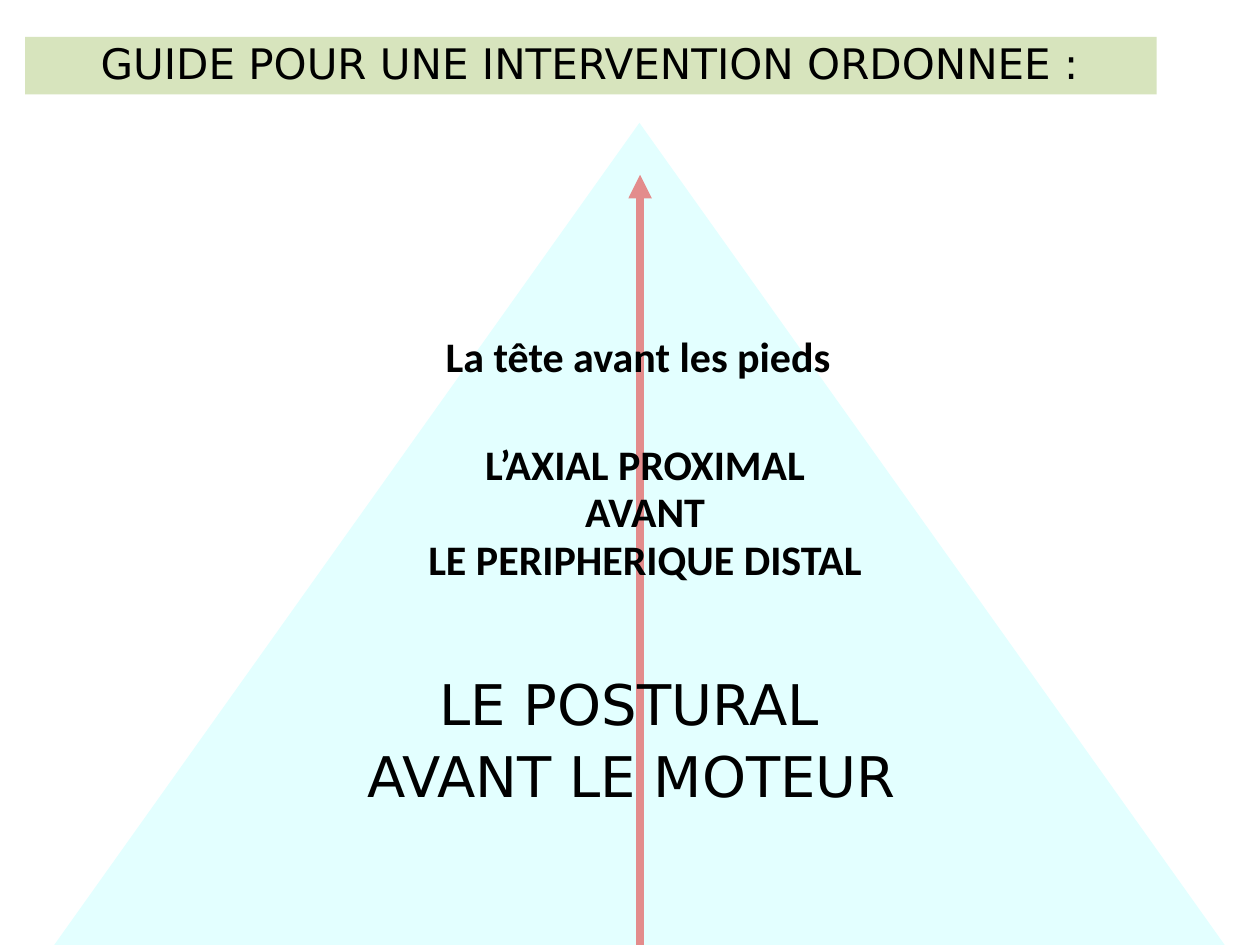
from lxml import etree
from pptx import Presentation
from pptx.dml.color import RGBColor
from pptx.enum.shapes import MSO_CONNECTOR as Connector, MSO_SHAPE as Shape
from pptx.enum.text import MSO_ANCHOR as Anchor, PP_ALIGN as Align
from pptx.oxml.ns import qn
from pptx.util import Inches, Pt

WIDTH, HEIGHT = 10, 7.5
AXIS = 0.508  # share of the slide width where the arrow stands

CALIBRI = {"name": "Calibri", "size": Pt(24), "bold": True}
HEADING = {"name": "DejaVu Sans", "size": Pt(24), "bold": False}
LARGE = HEADING | {"size": Pt(32)}


def color(hex_code):
    return RGBColor.from_string(hex_code)


def box(left, top, width, height):
    """Turn shares of the slide's size into lengths."""
    return (Inches(left * WIDTH), Inches(top * HEIGHT),
            Inches(width * WIDTH), Inches(height * HEIGHT))


def set_format(target, values):
    for name, value in values.items():
        setattr(target, name, value)


def add_filled(slide, kind, area, fill, opacity=None):
    shape = slide.shapes.add_shape(kind, *box(*area))
    shape.shadow.inherit = False
    shape.fill.solid()
    shape.fill.fore_color.rgb = color(fill)
    shape.line.fill.background()
    if opacity is not None:
        fill_color = shape.fill._xPr.find(qn("a:solidFill"))[0]
        etree.SubElement(fill_color, qn("a:alpha"), val=str(opacity * 1000))
    return shape


def add_arrow(slide, x, bottom, top, line_color, width):
    start_x, start_y, end_x, end_y = box(x, bottom, x, top)
    arrow = slide.shapes.add_connector(
        Connector.STRAIGHT, start_x, start_y, end_x, end_y)
    arrow.line.color.rgb = color(line_color)
    arrow.line.width = Pt(width)
    etree.SubElement(arrow.line._get_or_add_ln(), qn("a:tailEnd"), type="triangle")
    etree.SubElement(arrow._element.spPr, qn("a:effectLst"))


def write_lines(shape, lines, font, layout, indents=()):
    """Write one paragraph per line, with an optional left indent in inches for each."""
    frame = shape.text_frame
    set_format(frame, {"word_wrap": True, "vertical_anchor": Anchor.TOP})
    for index, line in enumerate(lines):
        paragraph = frame.add_paragraph() if index else frame.paragraphs[0]
        set_format(paragraph, {"text": line} | layout)
        set_format(paragraph.font, font)
        paragraph.font.color.rgb = color("000000")
        if indents:
            paragraph._p.get_or_add_pPr().set("marL", str(Inches(indents[index])))


def add_text(slide, area, *text):
    write_lines(slide.shapes.add_textbox(*box(*area)), *text)


def main():
    presentation = Presentation()
    set_format(presentation, {"slide_width": Inches(WIDTH),
                              "slide_height": Inches(HEIGHT)})
    slide = presentation.slides.add_slide(presentation.slide_layouts[6])

    add_arrow(slide, AXIS, 1, 0.185, "FF0000", 4.5)
    add_filled(slide, Shape.ISOSCELES_TRIANGLE, (0.043, 0.13, 0.929, 0.87),
               "CCFFFF", opacity=55)

    add_text(slide, (0.272, 0.468, 0.48, 0.179),
             ["L’AXIAL PROXIMAL", "AVANT", "LE PERIPHERIQUE DISTAL"], CALIBRI,
             {"alignment": Align.CENTER, "line_spacing": 0.8, "space_before": Pt(4)})
    left_layout = {"alignment": Align.LEFT, "line_spacing": 0.9}
    add_text(slide, (0.232, 0.71, 0.598, 0.157),
             ["LE POSTURAL", "AVANT LE MOTEUR"], LARGE,
             left_layout | {"space_before": Pt(6.4)}, (1.07, 0.5))

    banner = add_filled(slide, Shape.RECTANGLE, (0.02, 0.039, 0.898, 0.061), "D7E4BD")
    write_lines(banner, ["GUIDE POUR UNE INTERVENTION ORDONNEE :"], HEADING,
                left_layout | {"space_before": Pt(4.8)}, (0.5,))

    add_text(slide, (0.331, 0.343, 0.351, 0.067),
             ["La tête avant les pieds"], CALIBRI, {"alignment": Align.CENTER})

    presentation.save("out.pptx")


if __name__ == "__main__":
    main()
